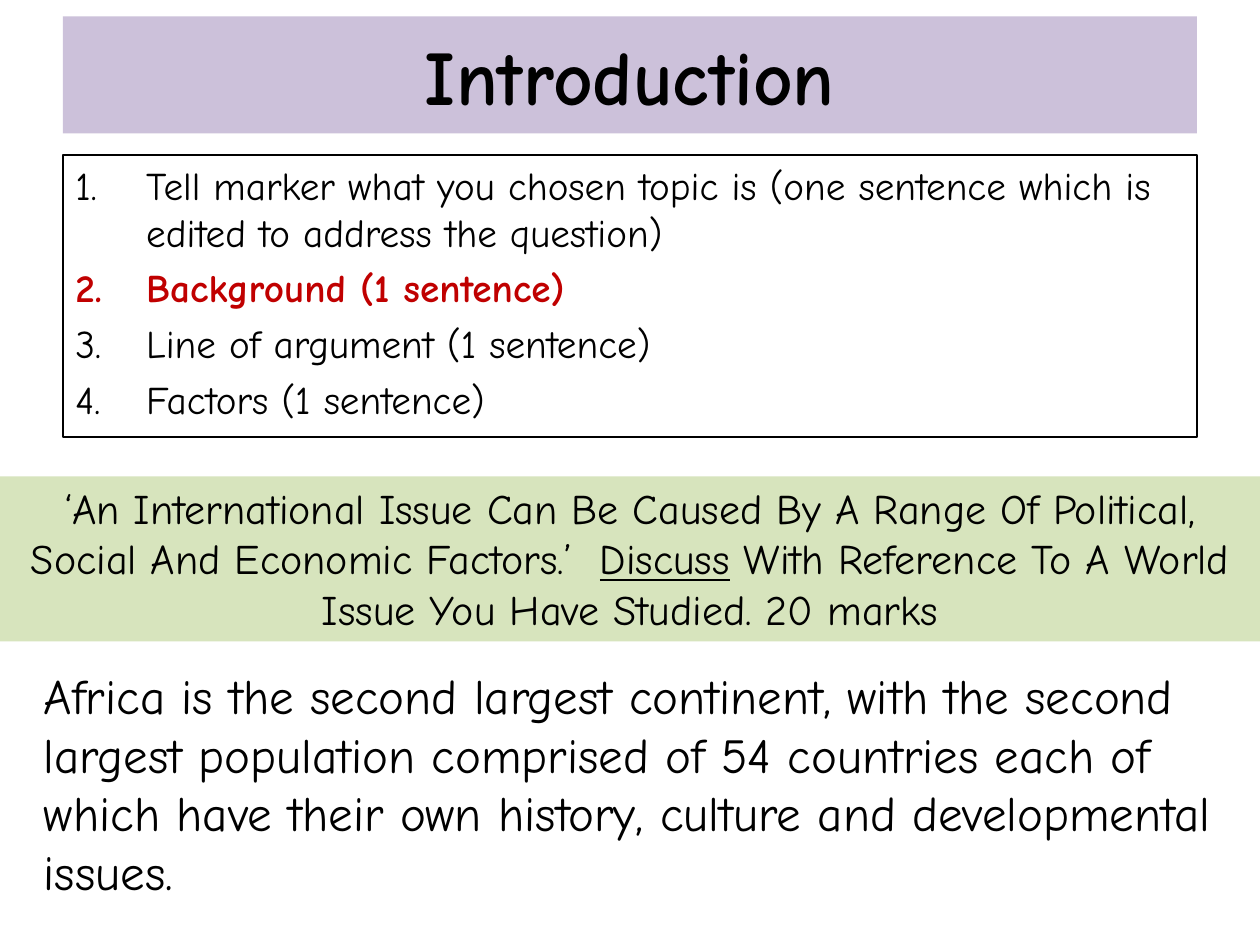
"""Build the essay introduction slide: title, steps, question and sample background."""
import pptx
import pptx.util
import pptx.dml.color
import pptx.enum.text
import pptx.oxml.ns
import lxml.etree

RGB = pptx.dml.color.RGBColor
BLACK = RGB(0x00, 0x00, 0x00)
WHITE = RGB(0xFF, 0xFF, 0xFF)
RED = RGB(0xC0, 0x00, 0x00)
LILAC = RGB(0xCC, 0xC1, 0xDA)
GREEN = RGB(0xD7, 0xE4, 0xBD)
MID = pptx.enum.text.PP_ALIGN.CENTER
LEFT = pptx.enum.text.PP_ALIGN.LEFT

deck = pptx.Presentation()
deck.slide_width = pptx.util.Inches(10)
deck.slide_height = pptx.util.Inches(7.5)
COL = deck.slide_width / 40
ROW = deck.slide_height / 75
slide = deck.slides.add_slide(deck.slide_layouts[6])


def add_box(col, row, cols, rows, fill=None):
    box = slide.shapes.add_textbox(
        round(col * COL), round(row * ROW), round(cols * COL), round(rows * ROW))
    box.text_frame.word_wrap = True
    if fill is not None:
        box.fill.solid()
        box.fill.fore_color.rgb = fill
    return box


def add_text(para, runs, size, align=LEFT, color=BLACK):
    para.alignment = align
    for text, style in runs:
        run = para.add_run()
        run.text = text
        look = {"name": "Comic Neue", "size": pptx.util.Pt(size), **style}
        for key, value in look.items():
            setattr(run.font, key, value)
        run.font.color.rgb = color


steps = [
    ("Tell marker what you chosen topic is (one sentence which is edited to address the question)", False),
    ("Background (1 sentence)", True),
    ("Line of argument (1 sentence)", False),
    ("Factors (1 sentence)", False),
]
box = add_box(2, 12.3, 36, 22.4)
box.line.color.rgb = BLACK
box.line.width = pptx.util.Pt(0.75)
frame = box.text_frame
for num, (text, bold) in enumerate(steps):
    para = frame.add_paragraph() if num else frame.paragraphs[0]
    para.space_before = pptx.util.Pt(4.9)
    add_text(para, [(text, {"bold": bold})], 22.4, color=RED if bold else BLACK)
    props = para._p.get_or_add_pPr()
    indent = round(2.25 * COL)
    props.set("marL", str(indent))
    props.set("indent", str(-indent))
    mark = lxml.etree.SubElement(props, pptx.oxml.ns.qn("a:buFont"))
    mark.set("typeface", "+mj-lt")
    mark = lxml.etree.SubElement(props, pptx.oxml.ns.qn("a:buAutoNum"))
    mark.set("type", "arabicPeriod")

panels = [
    ((1, 52.3, 38, 19.9, WHITE), 28, LEFT, [
        ("Africa is the second largest continent, with the second largest population "
         "comprised of 54 countries each of which have their own history, culture and "
         "developmental issues.", {})]),
    ((2, 1.3, 36, 9.3, LILAC), 44, MID, [("Introduction", {"bold": True})]),
    ((0, 37.8, 40, 13.1, GREEN), 24, MID, [
        ("‘An International Issue Can Be Caused By A Range Of Political, Social And "
         "Economic Factors.’  ", {}),
        ("Discuss", {"underline": True}),
        (" With Reference To A World Issue You Have Studied. 20 marks", {})]),
]
for place, size, align, runs in panels:
    frame = add_box(*place).text_frame
    if size == 44:
        frame.vertical_anchor = pptx.enum.text.MSO_ANCHOR.MIDDLE
    add_text(frame.paragraphs[0], runs, size, align)

deck.save("out.pptx")
